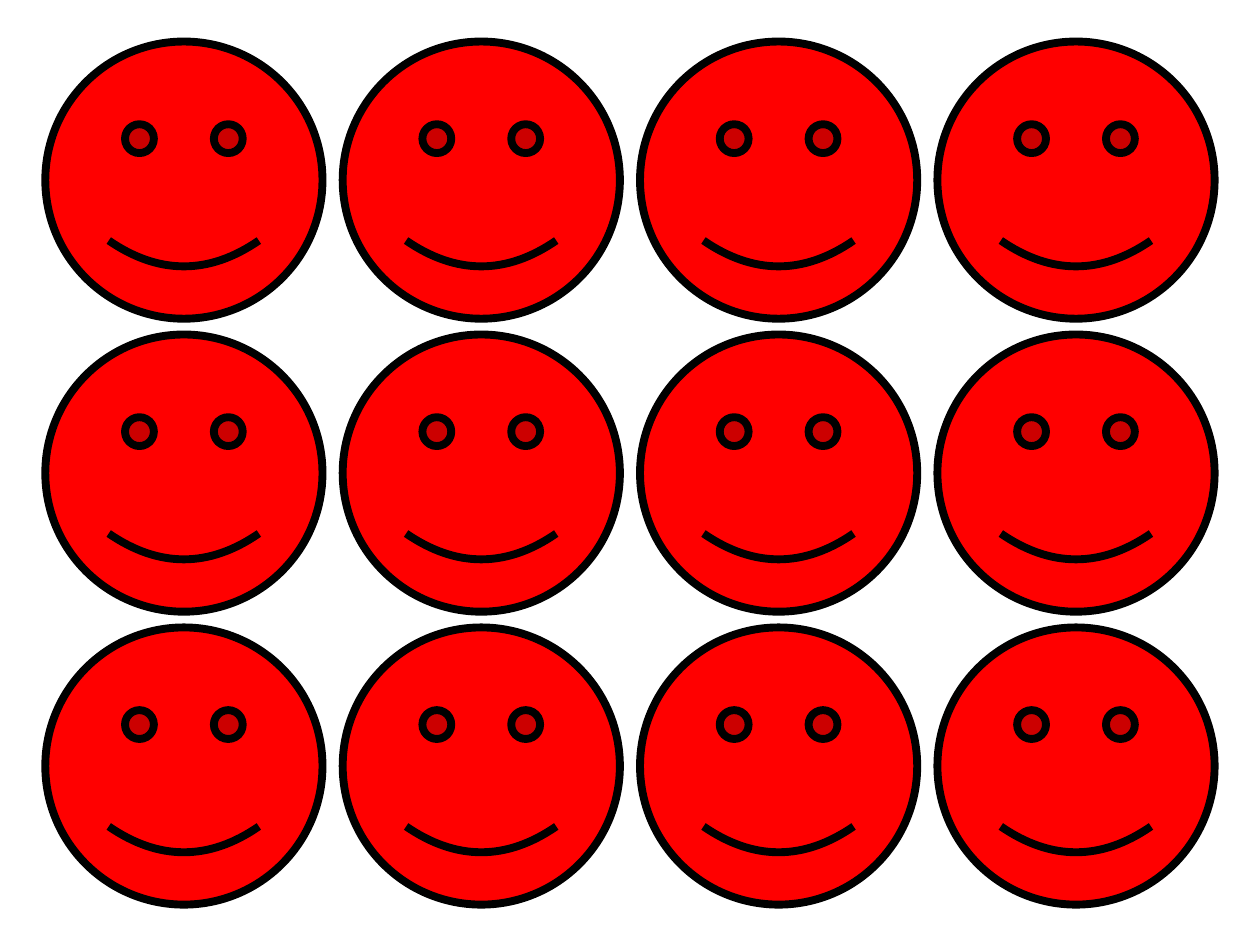
from pptx import Presentation
from pptx.dml.color import RGBColor
from pptx.enum.shapes import MSO_SHAPE as Shape
from pptx.util import Inches, Pt

ROWS, COLS = 3, 4
FACE_SIZE = 2.2
RED, BLACK = "FF0000", "000000"


def color(hex_code):
    return RGBColor.from_string(hex_code)


def add_face(shapes, left, top, size):
    sp = shapes.add_shape(Shape.SMILEY_FACE, Inches(left), Inches(top),
                          Inches(size), Inches(size))
    sp.shadow.inherit = False
    sp.fill.solid()
    sp.fill.fore_color.rgb = color(RED)
    sp.line.color.rgb = color(BLACK)
    sp.line.width = Pt(4.5)


def add_face_grid(slide, left, top, width, height):
    group = slide.shapes.add_group_shape()
    step_x = (width - FACE_SIZE) / (COLS - 1)
    step_y = (height - FACE_SIZE) / (ROWS - 1)
    for row in range(ROWS):
        for col in range(COLS):
            add_face(group.shapes, left + col * step_x, top + row * step_y, FACE_SIZE)


def main():
    prs = Presentation()
    prs.slide_width, prs.slide_height = Inches(10), Inches(7.5)
    slide = prs.slides.add_slide(prs.slide_layouts[6])
    add_face_grid(slide, 0.36, 0.33, 9.28, 6.85)
    prs.save("out.pptx")


if __name__ == "__main__":
    main()
